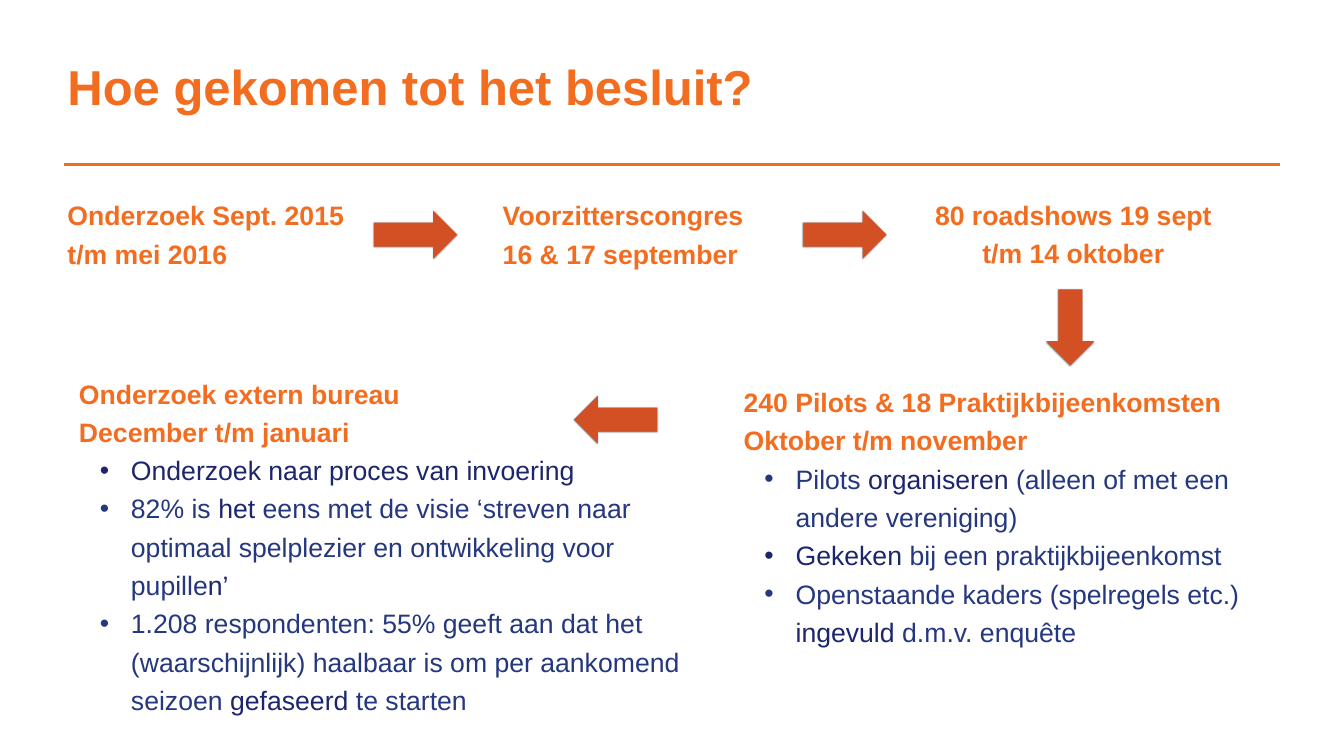
from lxml.etree import SubElement
from pptx import Presentation
from pptx.dml.color import RGBColor
from pptx.enum.shapes import MSO_CONNECTOR, MSO_SHAPE
from pptx.enum.text import MSO_ANCHOR, MSO_AUTO_SIZE, PP_ALIGN
from pptx.oxml import parse_xml
from pptx.oxml.ns import nsdecls, qn
from pptx.util import Cm, Pt

COLORS = {"orange": "F36D20", "arrow": "D34F24", "blue": "25377F", "navy": "1C266C"}
SHADOW = (
    f'<a:effectLst {nsdecls("a")}><a:outerShdw blurRad="25400" dist="12700" '
    'dir="5400000" rotWithShape="0"><a:srgbClr val="000000">'
    '<a:alpha val="50000"/></a:srgbClr></a:outerShdw></a:effectLst>'
)
TIGHT = (0.15, 0.15)
LOOSE = (0.25, 0.13)

ROW = 9.58
STEPS = [
    ((2.77, ROW, 18.16, 4.14), ["Onderzoek Sept. 2015", "t/m mei 2016"]),
    ((24.71, ROW, 21.72, 4.14), ["Voorzitterscongres", "16 & 17 september"]),
]
ROADSHOWS = ["80 roadshows 19 sept", "t/m 14 oktober"]
ARROWS = [
    (18.85, 10.62, 4.19, 0),
    (40.49, 10.62, 4.19, 0),
    (52.04, 15.29, 3.81, 90),
    (28.93, 19.94, 4.19, 180),
]
SURVEY = [
    [("Onderzoek naar proces van invoering", "navy")],
    [("82% is ", "blue"), ("het ", "navy"),
     ("eens met de visie ‘streven naar optimaal spelplezier en "
      "ontwikkeling voor pupille", "blue"), ("n’", "navy")],
    [("1.208 respondenten: 55% geeft aan dat het (waarschijnlijk) "
      "haalbaar is om per aankomend seizoen ", "blue"),
     ("gefaseerd ", "navy"), ("te starten", "blue")],
]
PILOTS = [
    [("Pilots ", "blue"), ("organiseren ", "navy"),
     ("(alleen of met een andere vereniging)", "blue")],
    [("Gekeken ", "navy"), ("bij een praktijkbijeenkomst", "blue")],
    [("Openstaande kaders (spelregels etc.) ", "blue"),
     ("ingevuld ", "navy"), ("d.m.v. enquête", "blue")],
]


class Deck:
    def __init__(self):
        self.prs = Presentation()
        self.prs.slide_width, self.prs.slide_height = Cm(67.74), Cm(38.1)
        self.slide = self.prs.slides.add_slide(self.prs.slide_layouts[3])
        self.font, self.size = "Arial", 38

    def rgb(self, name):
        return RGBColor.from_string(COLORS[name])

    def style(self, run, color="orange", bold=True, size=None):
        font = run.font
        font.name, font.size, font.bold = self.font, Pt(size or self.size), bold
        font.color.rgb = self.rgb(color)

    def frame(self, shape, box, pad, anchor):
        """Place a text shape and return its prepared text frame."""
        shape.left, shape.top, shape.width, shape.height = map(Cm, box)
        frame = shape.text_frame
        frame.word_wrap, frame.auto_size = True, MSO_AUTO_SIZE.NONE
        frame.vertical_anchor = anchor
        frame.margin_left = frame.margin_right = Cm(pad[0])
        frame.margin_top = frame.margin_bottom = Cm(pad[1])
        return frame

    def layout(self, para, align=PP_ALIGN.LEFT, bullet=False):
        """Set spacing, indent and bullet of a paragraph."""
        para.alignment, para.line_spacing = align, 1.2
        para.space_before = para.space_after = Pt(0)
        props = para._p.get_or_add_pPr()
        left, hang = (3.1, -1.57) if bullet else (0.99, -0.51)
        props.set("marL", str(Cm(left)))
        props.set("indent", str(Cm(hang)))
        if bullet:
            SubElement(props, qn("a:buFont"), typeface="Arial")
            SubElement(props, qn("a:buChar"), char="•")
        else:
            SubElement(props, qn("a:buNone"))

    def title(self, text, box):
        frame = self.frame(self.slide.shapes.title, box, TIGHT, MSO_ANCHOR.MIDDLE)
        frame.text = text
        para = frame.paragraphs[0]
        para.alignment = PP_ALIGN.LEFT
        self.style(para.runs[0], size=70)

    def heads(self, frame, lines, align=PP_ALIGN.LEFT):
        frame.text = "\n".join(lines)
        for para in frame.paragraphs:
            self.layout(para, align)
            self.style(para.runs[0])

    def step(self, lines, box, pad=TIGHT, anchor=MSO_ANCHOR.MIDDLE, align=PP_ALIGN.LEFT):
        shape = self.slide.shapes.add_textbox(0, 0, 0, 0)
        self.heads(self.frame(shape, box, pad, anchor), lines, align)

    def list(self, index, lines, items, box):
        shape = self.slide.placeholders[index]
        frame = self.frame(shape, box, LOOSE, MSO_ANCHOR.TOP)
        self.heads(frame, lines)
        for item in items:
            para = frame.add_paragraph()
            self.layout(para, bullet=True)
            for text, color in item:
                run = para.add_run()
                run.text = text
                self.style(run, color, bold=False)

    def arrow(self, left, top, width, turn):
        shape = self.slide.shapes.add_shape(
            MSO_SHAPE.RIGHT_ARROW, Cm(left), Cm(top), Cm(width), Cm(2.41))
        shape.rotation = turn
        shape.fill.solid()
        shape.fill.fore_color.rgb = self.rgb("arrow")
        shape.line.fill.background()
        shape._element.spPr.append(parse_xml(SHADOW))

    def rule(self, left, right, top):
        line = self.slide.shapes.add_connector(
            MSO_CONNECTOR.STRAIGHT, Cm(left), Cm(top), Cm(right), Cm(top))
        line.line.color.rgb, line.line.width = self.rgb("orange"), Pt(4)
        SubElement(line._element.spPr, qn("a:effectLst"))


def main():
    deck = Deck()
    deck.title("Hoe gekomen tot het besluit?", (3.25, 2.67, 35.2, 3.3))
    deck.rule(3.25, 64.49, 8.28)
    for box, lines in STEPS:
        deck.step(lines, box)
    deck.step(ROADSHOWS, (45.26, ROW, 17.2, 6.15), LOOSE,
              MSO_ANCHOR.TOP, PP_ALIGN.CENTER)
    for arrow in ARROWS:
        deck.arrow(*arrow)
    deck.list(1, ["Onderzoek extern bureau", "December t/m januari"],
              SURVEY, (3.25, 18.57, 31.75, 17.75))
    deck.list(2, ["240 Pilots & 18 Praktijkbijeenkomsten", "Oktober t/m november"],
              PILOTS, (36.75, 19, 30, 13.84))
    deck.prs.save("out.pptx")


if __name__ == "__main__":
    main()
